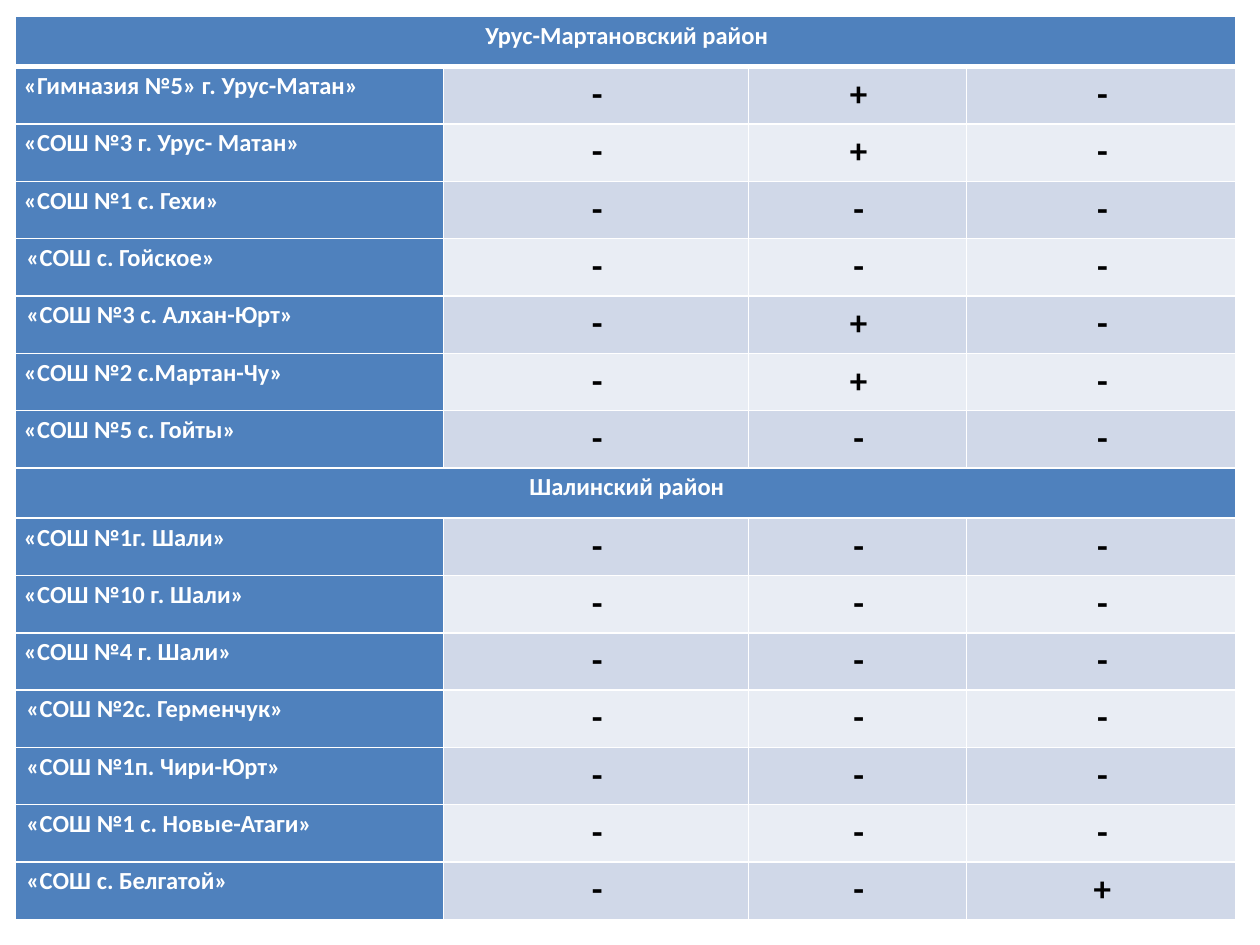
from lxml.etree import SubElement
from pptx import Presentation
from pptx.dml.color import RGBColor
from pptx.enum.text import MSO_ANCHOR, PP_ALIGN
from pptx.oxml.ns import qn
from pptx.util import Inches, Pt

BLUE, WHITE, BLACK = "4F81BD", "FFFFFF", "000000"
BANDS = ("D0D8E8", "E9EDF4")
INDENT = 0.02
COLUMN_WIDTHS = (3.4, 2.42, 1.73, 2.14)
HEADER_HEIGHT = 0.4
DISTRICTS = [
    ("Урус-Мартановский район", [
        ("«Гимназия №5» г. Урус-Матан»", 0, "-+-"),
        ("«СОШ №3 г. Урус- Матан»", 0, "-+-"),
        ("«СОШ №1 с. Гехи»", 0, "---"),
        ("«СОШ с. Гойское»", INDENT, "---"),
        ("«СОШ №3 с. Алхан-Юрт»", INDENT, "-+-"),
        ("«СОШ №2 с.Мартан-Чу»", 0, "-+-"),
        ("«СОШ №5 с. Гойты»", 0, "---"),
    ]),
    ("Шалинский район", [
        ("«СОШ №1г. Шали»", 0, "---"),
        ("«СОШ №10 г. Шали»", 0, "---"),
        ("«СОШ №4 г. Шали»", 0, "---"),
        ("«СОШ №2с. Герменчук»", INDENT, "---"),
        ("«СОШ №1п. Чири-Юрт»", INDENT, "---"),
        ("«СОШ №1 с. Новые-Атаги»", INDENT, "---"),
        ("«СОШ с. Белгатой»", INDENT, "--+"),
    ]),
]


def color(value):
    return RGBColor.from_string(value)


def set_borders(cell, top, bottom):
    properties = cell._tc.get_or_add_tcPr()
    for side, width in (("L", 1), ("R", 1), ("T", top), ("B", bottom)):
        line = SubElement(properties, qn(f"a:ln{side}"), w=str(Pt(width)))
        fill = SubElement(line, qn("a:solidFill"))
        SubElement(fill, qn("a:srgbClr"), val=WHITE)


def style_cell(cell, fill, row):
    set_borders(cell, 3 if row == 1 else 1, 3 if row == 0 else 1)
    cell.fill.solid()
    cell.fill.fore_color.rgb = color(fill)
    cell.margin_left = cell.margin_right = Inches(0.07)
    cell.margin_top = cell.margin_bottom = 0


def write_cell(cell, text, size, text_color, align, indent):
    paragraph = cell.text_frame.paragraphs[0]
    paragraph.alignment = align
    paragraph.line_spacing = 1.15
    paragraph._p.get_or_add_pPr().set("marL", str(Inches(indent)))
    run = paragraph.add_run()
    run.text = text
    run.font.name = "Calibri"
    run.font.size = Pt(size)
    run.font.bold = True
    run.font.color.rgb = color(text_color)
    cell.vertical_anchor = MSO_ANCHOR.TOP


def add_district_row(table, row, title):
    table.rows[row].height = Inches(HEADER_HEIGHT)
    for cell in table.rows[row].cells:
        style_cell(cell, BLUE, row)
    first = table.cell(row, 0)
    first.merge(table.cell(row, len(COLUMN_WIDTHS) - 1))
    write_cell(first, title, 14, WHITE, PP_ALIGN.CENTER, INDENT)


def add_school_row(table, row, height, school, band):
    name, indent, marks = school
    table.rows[row].height = Inches(height)
    name_cell, *mark_cells = table.rows[row].cells
    style_cell(name_cell, BLUE, row)
    write_cell(name_cell, name, 14, WHITE, PP_ALIGN.LEFT, indent)
    for cell, mark in zip(mark_cells, marks):
        style_cell(cell, band, row)
        write_cell(cell, mark, 20, BLACK, PP_ALIGN.CENTER, INDENT)


def add_school_table(slide, left, top, width, height):
    school_count = sum(len(schools) for _, schools in DISTRICTS)
    row_count = school_count + len(DISTRICTS)
    school_height = (height - len(DISTRICTS) * HEADER_HEIGHT) / school_count
    table = slide.shapes.add_table(
        row_count, len(COLUMN_WIDTHS),
        Inches(left), Inches(top), Inches(width), Inches(height)).table
    for column, column_width in zip(table.columns, COLUMN_WIDTHS):
        column.width = Inches(column_width)
    row = 0
    for title, schools in DISTRICTS:
        add_district_row(table, row, title)
        for index, school in enumerate(schools):
            row += 1
            add_school_row(table, row, school_height, school, BANDS[index % 2])
        row += 1


def main():
    presentation = Presentation()
    presentation.slide_width = Inches(10)
    presentation.slide_height = Inches(7.5)
    slide = presentation.slides.add_slide(presentation.slide_layouts[6])
    add_school_table(slide, 0.12, 0.13, 9.69, 7.17)
    presentation.save("out.pptx")


if __name__ == "__main__":
    main()
